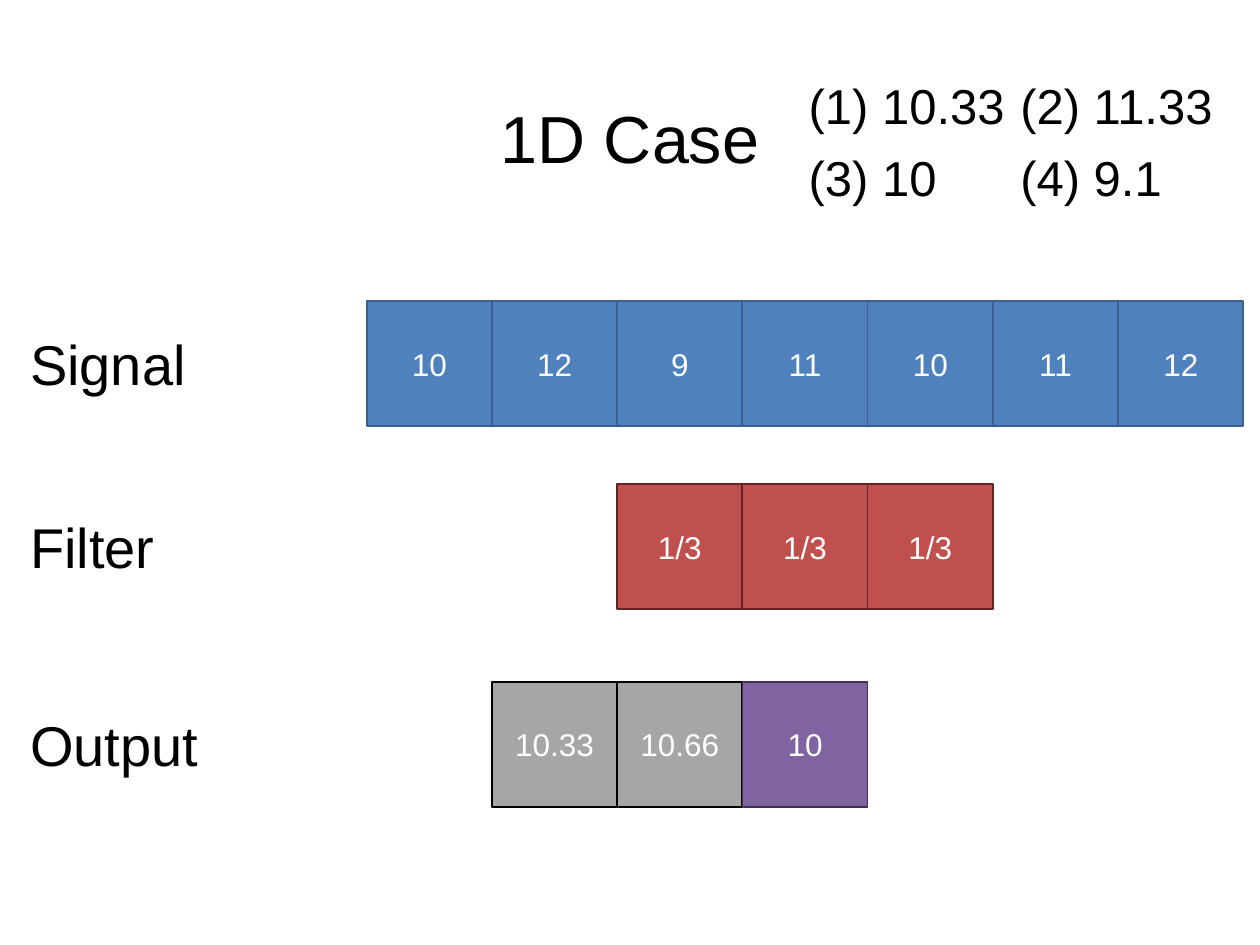
"""Build the slide on filtering a one-dimensional signal."""
from pptx import Presentation
from pptx.dml.color import RGBColor
from pptx.enum.shapes import MSO_SHAPE
from pptx.enum.text import MSO_ANCHOR, PP_ALIGN
from pptx.util import Inches, Pt

BLACK = RGBColor(0x00, 0x00, 0x00)
WHITE = RGBColor(0xFF, 0xFF, 0xFF)
BLUE = (RGBColor(0x4F, 0x81, 0xBD), RGBColor(0x3A, 0x5F, 0x8C))
RED = (RGBColor(0xC0, 0x50, 0x4D), RGBColor(0x63, 0x25, 0x23))
GRAY = (RGBColor(0xA6, 0xA6, 0xA6), BLACK)
PURPLE = (RGBColor(0x80, 0x64, 0xA2), RGBColor(0x40, 0x31, 0x52))

FONT = "Arial"
TITLE = "1D Case"
ANSWERS = [["(1) 10.33", "(2) 11.33"], ["(3) 10", "(4) 9.1"]]
ROWS = [
    ("Signal", 2.4, 2.39, 0, [(value, BLUE) for value in ("10", "12", "9", "11", "10", "11", "12")]),
    ("Filter", 2.86, 3.84, 2, [("1/3", RED)] * 3),
    ("Output", 1.55, 5.41, 1, [("10.33", GRAY), ("10.66", GRAY), ("10", PURPLE)]),
]

GRID_LEFT = 2.91
CELL = 0.994
LABEL_LEFT, LABEL_DROP, LABEL_HEIGHT = 0.14, 0.18, 0.64
ANSWER_LEFT, ANSWER_TOP = 6.32, 0.55
ANSWER_STEP, ANSWER_WIDTH, ANSWER_HEIGHT = 1.68, 2, 0.57


def write(shape, text, size, color, align=PP_ALIGN.LEFT, anchor=MSO_ANCHOR.TOP):
    frame = shape.text_frame
    frame.text = text
    frame.word_wrap = True
    frame.vertical_anchor = anchor
    para = frame.paragraphs[0]
    para.alignment = align
    font = para.runs[0].font
    font.name, font.size, font.color.rgb = FONT, Pt(size), color
    return para


def add_text(page, bounds, *style):
    box = page.shapes.add_textbox(*map(Inches, bounds))
    return write(box, *style)


def add_cell(page, left, top, text, colors):
    fill, line = colors
    cell = page.shapes.add_shape(MSO_SHAPE.RECTANGLE, *map(Inches, (left, top, CELL, CELL)))
    cell.shadow.inherit = False
    cell.fill.solid()
    cell.fill.fore_color.rgb = fill
    cell.line.color.rgb = line
    cell.line.width = Pt(1)
    write(cell, text, 18, WHITE, PP_ALIGN.CENTER, MSO_ANCHOR.MIDDLE)


def main():
    deck = Presentation()
    deck.slide_width, deck.slide_height = Inches(10), Inches(7.5)
    page = deck.slides.add_slide(deck.slide_layouts[6])

    title = add_text(page, (0.69, 0.4, 8.62, 1.45), TITLE, 38, BLACK, PP_ALIGN.CENTER, MSO_ANCHOR.MIDDLE)
    title.line_spacing = 0.9

    for label, width, top, offset, cells in ROWS:
        add_text(page, (LABEL_LEFT, top + LABEL_DROP, width, LABEL_HEIGHT), label, 32, BLACK)
        for column, (value, colors) in enumerate(cells, offset):
            add_cell(page, GRID_LEFT + column * CELL, top, value, colors)

    for row, answers in enumerate(ANSWERS):
        for column, answer in enumerate(answers):
            left = ANSWER_LEFT + column * ANSWER_STEP
            top = ANSWER_TOP + row * ANSWER_HEIGHT
            add_text(page, (left, top, ANSWER_WIDTH, ANSWER_HEIGHT), answer, 28, BLACK)

    deck.save("out.pptx")


if __name__ == "__main__":
    main()
